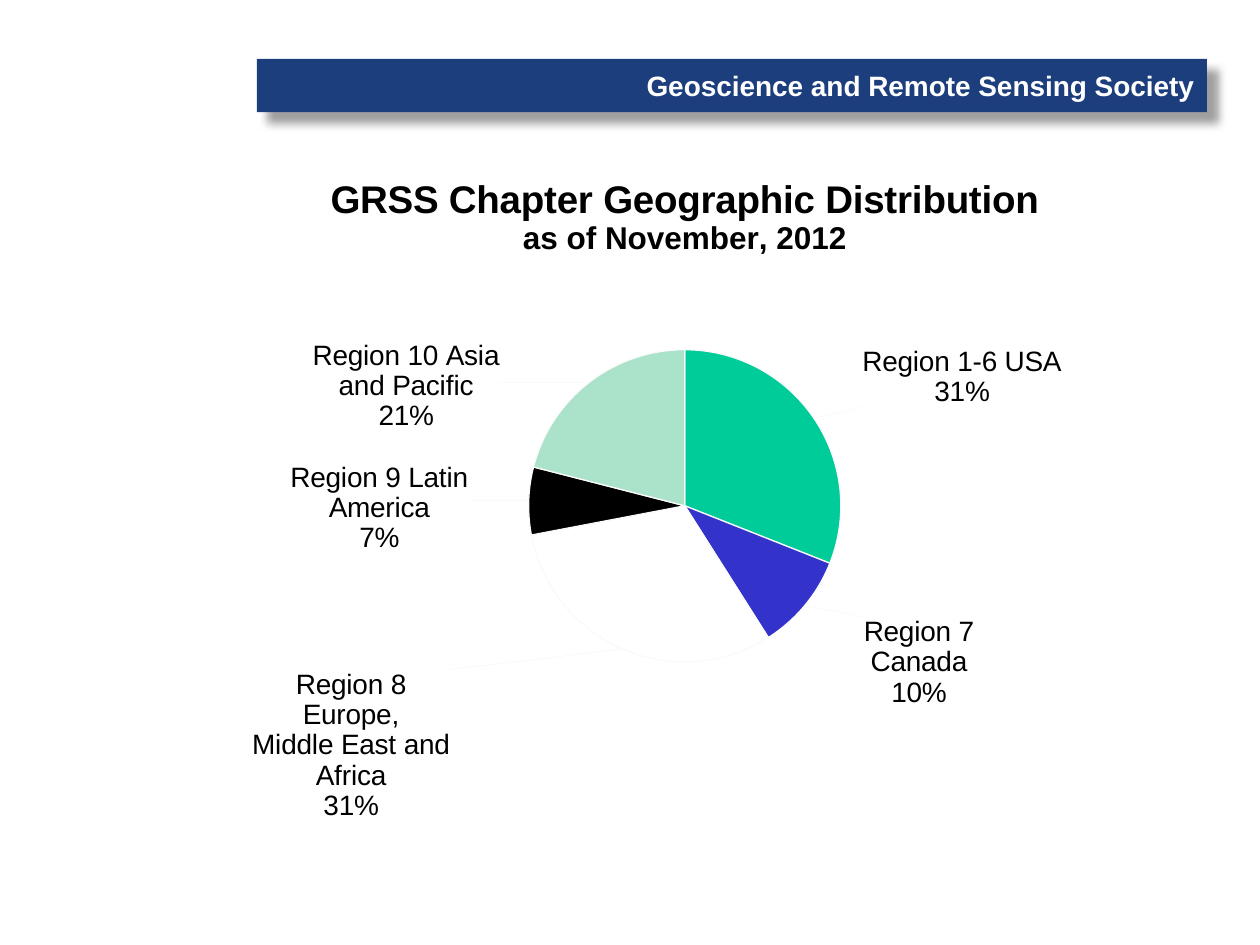
from pptx import Presentation
from pptx.chart.data import CategoryChartData
from pptx.dml.color import RGBColor
from pptx.enum.chart import XL_CHART_TYPE as ChartType, XL_LABEL_POSITION as LabelPosition
from pptx.enum.shapes import MSO_SHAPE as Shape
from pptx.enum.text import MSO_ANCHOR as Anchor, PP_ALIGN as Align
from pptx.oxml import parse_xml
from pptx.oxml.ns import nsdecls, qn
from pptx.util import Cm, Pt

COLORS = {"banner": "1C3E7D", "white": "FFFFFF", "black": "000000",
          "outline": "FAFAFA", "shadow": "808080"}

# Region, share in percent, slice colour, label shift as a fraction of the chart
REGIONS = [
    ("Region 1-6 USA", 31, "00CC99", (0.04, -0.01)),
    ("Region 7 Canada", 10, "3333CC", (0.05, 0.01)),
    ("Region 8 Europe,\nMiddle East and Africa", 31, "FFFFFF", (-0.16, 0.02)),
    ("Region 9 Latin America", 7, "000000", (-0.05, 0.01)),
    ("Region 10 Asia and Pacific", 21, "AAE2CA", (-0.08, 0.08)),
]
TITLE_LINES = [("GRSS Chapter Geographic Distribution", 22),
               ("as of November, 2012", 18)]


def manual_layout(x, y, size=None):
    """Return a c:layout; with a size it places the inner plot area."""
    target = '<c:layoutTarget val="inner"/>' if size else ""
    edges = '<c:xMode val="edge"/><c:yMode val="edge"/>' if size else ""
    extent = f'<c:w val="{size[0]}"/><c:h val="{size[1]}"/>' if size else ""
    return parse_xml(
        f'<c:layout {nsdecls("c")}><c:manualLayout>{target}{edges}'
        f'<c:x val="{x}"/><c:y val="{y}"/>{extent}</c:manualLayout></c:layout>')


class Deck:
    font_name = "Arial"

    def __init__(self):
        self.presentation = Presentation()
        self.presentation.slide_width = Cm(25.4)
        self.presentation.slide_height = Cm(19.05)
        self.slide = self.presentation.slides.add_slide(
            self.presentation.slide_layouts[6])

    def style(self, font, size, color, bold=False):
        font.name = self.font_name
        font.size = Pt(size)
        font.bold = bold
        font.color.rgb = RGBColor.from_string(COLORS[color])

    def banner(self, text, left, top, width, height):
        bar = self.slide.shapes.add_shape(
            Shape.RECTANGLE, Cm(left), Cm(top), Cm(width), Cm(height))
        bar.fill.solid()
        bar.fill.fore_color.rgb = RGBColor.from_string(COLORS["banner"])
        bar.line.fill.background()
        bar.shadow.inherit = False
        effects = bar.element.spPr.find(qn("a:effectLst"))
        effects.append(parse_xml(
            f'<a:outerShdw {nsdecls("a")} blurRad="{Pt(5)}" dist="{Pt(8.5)}" '
            f'dir="2700000" algn="tl" rotWithShape="0">'
            f'<a:srgbClr val="{COLORS["shadow"]}"><a:alpha val="75000"/>'
            '</a:srgbClr></a:outerShdw>'))
        bar.text_frame.word_wrap = False
        bar.text_frame.vertical_anchor = Anchor.MIDDLE
        society = bar.text_frame.paragraphs[0]
        society.text = text
        society.alignment = Align.RIGHT
        self.style(society.font, 16, "white", bold=True)

    def pie(self, title_lines, regions, left, top, width, height):
        shares = CategoryChartData()
        shares.categories = [name for name, *_ in regions]
        shares.add_series("Series 1", [share for _, share, *_ in regions])
        chart = self.slide.shapes.add_chart(
            ChartType.PIE, Cm(left), Cm(top), Cm(width), Cm(height), shares).chart
        self.style(chart.font, 18, "black")
        chart.has_legend = False
        self.chart_title(chart, title_lines)

        plot = chart.plots[0]
        plot.vary_by_categories = True
        plot_area = chart.element.chart.plotArea
        for old in plot_area.findall(qn("c:layout")):
            plot_area.remove(old)
        plot_area.insert(0, manual_layout(0.353, 0.291, (0.294, 0.461)))

        series = plot.series[0]
        series.format.line.color.rgb = RGBColor.from_string(COLORS["outline"])
        labels = series.data_labels
        labels.show_category_name = labels.show_percentage = True
        labels.show_value = False
        labels.position = LabelPosition.OUTSIDE_END
        self.style(labels.font, 16, "black")
        self.separate_lines(labels._element)
        for index, (_, _, color, shift) in enumerate(regions):
            self.slice(series.points[index], color, shift)

    def chart_title(self, chart, lines):
        chart.has_title = True
        chart.chart_title.include_in_layout = False
        frame = chart.chart_title.text_frame
        for index, (text, size) in enumerate(lines):
            line = frame.add_paragraph() if index else frame.paragraphs[0]
            line.text = text
            self.style(line.font, size, "black", bold=True)
            self.style(line.runs[0].font, size, "black", bold=True)

    def slice(self, point, color, shift):
        point.format.fill.solid()
        point.format.fill.fore_color.rgb = RGBColor.from_string(color)
        point.format.line.color.rgb = RGBColor.from_string(COLORS["outline"])
        point.format.line.width = Pt(0.75)
        label = point.data_label
        self.style(label.font, 16, "black")
        label.position = LabelPosition.OUTSIDE_END
        element = label._dLbl
        element.find(qn("c:idx")).addnext(manual_layout(*shift))
        for tag, shown in (("c:showVal", "0"), ("c:showCatName", "1"),
                           ("c:showPercent", "1")):
            element.find(qn(tag)).set("val", shown)
        self.separate_lines(element)

    @staticmethod
    def separate_lines(labels):
        """Put the percentage on its own line below the category."""
        labels.find(qn("c:showBubbleSize")).addnext(
            parse_xml(f'<c:separator {nsdecls("c")}>\n</c:separator>'))


if __name__ == "__main__":
    deck = Deck()
    deck.banner("Geoscience and Remote Sensing Society", 5.18, 1.19, 19.15, 1.07)
    deck.pie(TITLE_LINES, REGIONS, 3.1, 3.07, 21.41, 13.67)
    deck.presentation.save("out.pptx")
